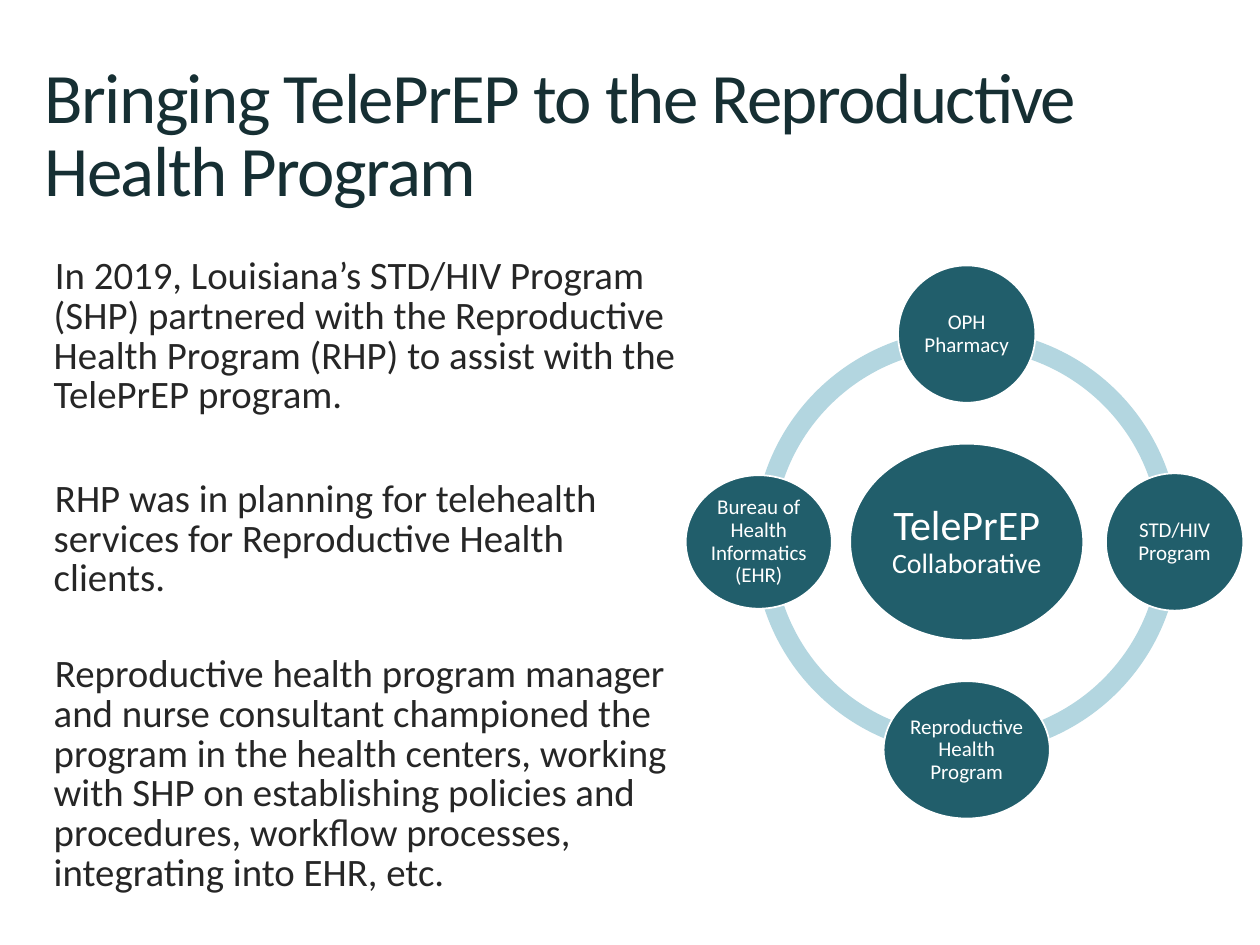
import pptx
import pptx.util
import pptx.dml.color
import pptx.enum.shapes
import pptx.enum.text

Pt = pptx.util.Pt
RGB = pptx.dml.color.RGBColor
KIND = pptx.enum.shapes.MSO_SHAPE
ALIGN = pptx.enum.text.PP_ALIGN
ANCHOR = pptx.enum.text.MSO_ANCHOR

INK = RGB(0x16, 0x2F, 0x33)
GREY = RGB(0x26, 0x26, 0x26)
TEAL = RGB(0x21, 0x5E, 0x6B)
PALE = RGB(0xB3, 0xD6, 0xE0)
WHITE = RGB(0xFF, 0xFF, 0xFF)

TITLE = "Bringing TelePrEP to the Reproductive Health Program"
# text, space before
BODY = [
    ("In 2019, Louisiana’s STD/HIV Program (SHP) partnered with the "
     "Reproductive Health Program (RHP) to assist with the TelePrEP program.", 9.8),
    ("RHP was in planning for telehealth services for Reproductive Health "
     "clients.", 36.7),
    ("Reproductive health program manager and nurse consultant championed the "
     "program in the health centers, working with SHP on establishing policies "
     "and procedures, workflow processes, integrating into EHR, etc.", 32.2),
]
# runs of (text, size), step from the hub in radii, width, height, inset
NODES = [
    ([("TelePrEP ", 24), ("Collaborative", 16)], (0, 0), 133.2, 112.3, 2.2),
    ([("OPH Pharmacy", 12)], (0, -1), 78.5, 78.5, 1),
    ([("STD/HIV Program", 12)], (1, 0), 78.5, 78.5, 1),
    ([("Reproductive Health Program", 12)], (0, 1), 95, 78.5, 1),
    ([("Bureau of Health Informatics (EHR)", 12)], (-1, 0), 83.5, 76.3, 1),
]
HUB = (552.4, 309.7)
RADIUS = 118.8
RING = 243.4
TURN = 54  # a quarter turn in blockArc units
BAND = 0.046


def style(item, values):
    for name, value in values.items():
        setattr(item, name, value)


def write(para, text, size, color):
    run = para.add_run()
    run.text = text
    style(run.font, {"name": "Calibri", "size": Pt(size)})
    run.font.color.rgb = color
    return run


def box(left, top, wide, high, anchor):
    frame = slide.shapes.add_textbox(Pt(left), Pt(top), Pt(wide), Pt(high)).text_frame
    style(frame, {"word_wrap": True, "vertical_anchor": anchor})
    return frame


def solid(kind, mid, wide, high, color):
    """Add a filled shape centred on mid."""
    left, top = mid[0] - wide / 2, mid[1] - high / 2
    shape = slide.shapes.add_shape(kind, Pt(left), Pt(top), Pt(wide), Pt(high))
    shape.shadow.inherit = False
    shape.fill.solid()
    shape.fill.fore_color.rgb = color
    return shape


deck = pptx.Presentation()
style(deck, {"slide_width": Pt(720), "slide_height": Pt(540)})
slide = deck.slides.add_slide(deck.slide_layouts[6])

para = box(18.4, 30.2, 636.5, 97.9, ANCHOR.MIDDLE).paragraphs[0]
para.line_spacing = 0.85
write(para, TITLE, 40.5, INK)._r.get_or_add_rPr().set("spc", "-90")

frame = box(18, 144, 380.2, 358.6, ANCHOR.TOP)
frame.margin_right = Pt(9.5)
for i, (text, gap) in enumerate(BODY):
    para = frame.paragraphs[0] if i == 0 else frame.add_paragraph()
    style(para, {"line_spacing": 0.85, "space_before": Pt(gap)})
    props = para._p.get_or_add_pPr()
    props.set("marL", str(Pt(5.6)))
    props.set("indent", str(Pt(0.7)))
    write(para, text, 22.2, GREY)

for i in range(4):
    arc = solid(KIND.BLOCK_ARC, HUB, RING, RING, PALE)
    arc.line.fill.background()
    for j, value in enumerate((i * TURN, (i + 1) % 4 * TURN, BAND)):
        arc.adjustments[j] = value

for runs, (dx, dy), wide, high, inset in NODES:
    mid = (HUB[0] + dx * RADIUS, HUB[1] + dy * RADIUS)
    node = solid(KIND.OVAL, mid, wide, high, TEAL)
    node.line.color.rgb = WHITE
    node.line.width = Pt(1)
    frame = node.text_frame
    style(frame, {"word_wrap": True, "vertical_anchor": ANCHOR.MIDDLE})
    style(frame, {"margin_" + side: Pt(inset)
                  for side in ("left", "top", "right", "bottom")})
    para = frame.paragraphs[0]
    style(para, {"alignment": ALIGN.CENTER, "line_spacing": 0.9})
    for text, size in runs:
        write(para, text, size, WHITE)

deck.save("out.pptx")
